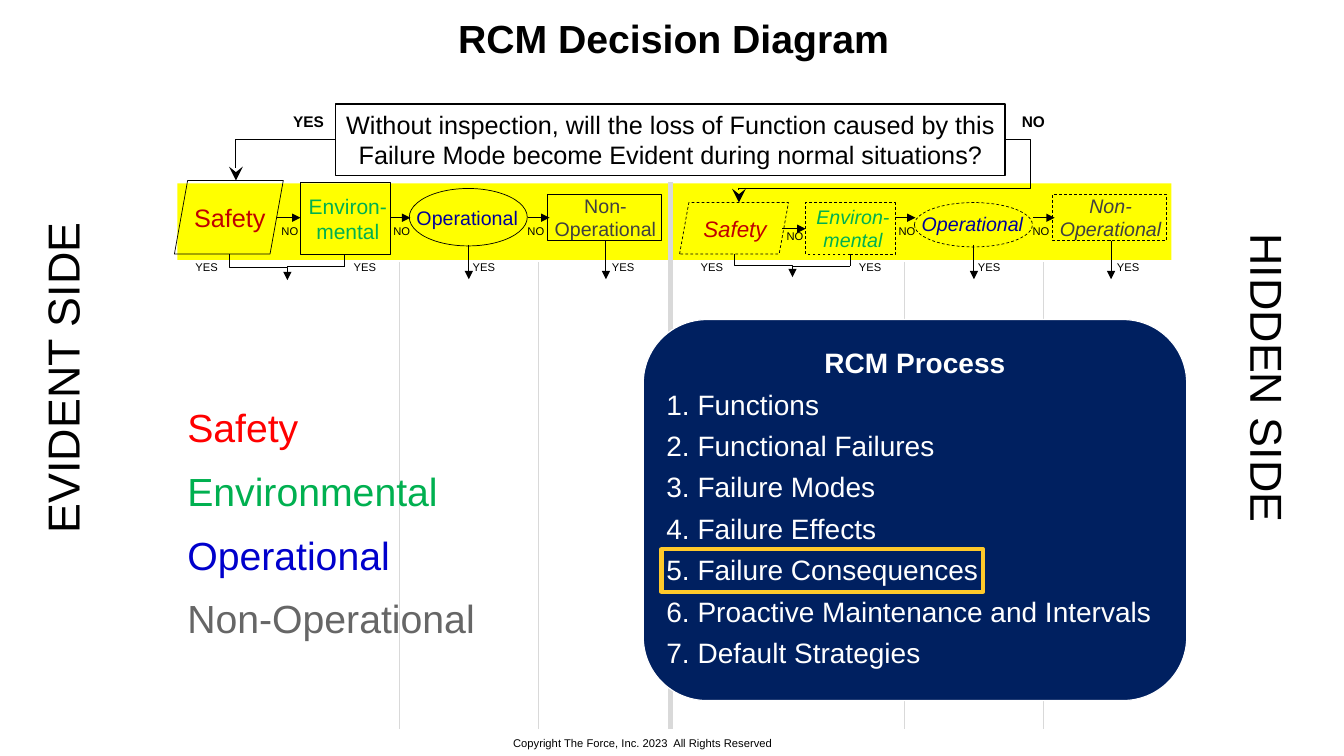
from pptx import Presentation
from pptx.dml.color import RGBColor
from pptx.enum.dml import MSO_LINE
from pptx.enum.shapes import MSO_CONNECTOR as CONNECTOR, MSO_SHAPE as SHAPE
from pptx.enum.text import MSO_ANCHOR as ANCHOR, MSO_AUTO_SIZE as AUTO_SIZE, PP_ALIGN as ALIGN
from pptx.oxml.ns import qn
from pptx.oxml.xmlchemy import OxmlElement
from pptx.util import Inches, Pt

COLORS = {
    "black": "000000", "white": "FFFFFF", "band": "FFFF00", "divider": "D9D9D9",
    "safety": "C00000", "environment": "00B050", "operation": "000099",
    "other": "404040", "panel": "002060", "highlight": "FFC92A",
    "red": "FF0000", "blue": "0000CC", "gray": "666666",
}
HIDDEN_DX = 5.01  # distance from the evident side to the hidden side

# Outline of each step: shape, left, top, width, height
EVIDENT_SHAPES = [
    (SHAPE.PARALLELOGRAM, 1.73, 1.79, 1.08, 0.73),
    (SHAPE.RECTANGLE, 2.98, 1.81, 0.89, 0.71),
    (SHAPE.OVAL, 4.06, 1.87, 1.17, 0.57),
    (SHAPE.RECTANGLE, 5.43, 1.93, 1.13, 0.46),
]
HIDDEN_SHAPES = [
    (SHAPE.PARALLELOGRAM, 1.73, 2.01, 1.08, 0.51),
    (SHAPE.RECTANGLE, 2.98, 2.01, 0.89, 0.51),
    (SHAPE.OVAL, 4.06, 2.01, 1.17, 0.44),
    (SHAPE.RECTANGLE, 5.43, 1.93, 1.13, 0.46),
]
# Label of each step: text, colour, left, width
STEP_LABELS = [
    ("Safety", "safety", 1.8, 0.96),
    ("Environ-\nmental", "environment", 2.91, 1.08),
    ("Operational", "operation", 3.96, 1.35),
    ("Non-\nOperational", "other", 5.33, 1.35),
]
# Top, height and text size of each label
EVIDENT_LABELS = [(1.96, 0.4, 18), (1.87, 0.61, 15), (1.99, 0.34, 14), (1.87, 0.57, 14)]
HIDDEN_LABELS = [(2.09, 0.37, 16), (1.98, 0.57, 14), (2.05, 0.34, 14), (1.87, 0.57, 14)]

PROCESS_STEPS = [
    "Functions", "Functional Failures", "Failure Modes", "Failure Effects",
    "Failure Consequences", "Proactive Maintenance and Intervals", "Default Strategies",
]
LEGEND = [("Safety", "red"), ("Environmental", "environment"),
          ("Operational", "blue"), ("Non-Operational", "gray")]


def rgb(name):
    return RGBColor.from_string(COLORS[name])


def add_box(s, kind, left, top, width, height, fill=None, line=None, weight=0.5, dashed=False):
    sp = s.shapes.add_shape(kind, Inches(left), Inches(top), Inches(width), Inches(height))
    sp.shadow.inherit = False
    if fill:
        sp.fill.solid()
        sp.fill.fore_color.rgb = rgb(fill)
    else:
        sp.fill.background()
    if line:
        sp.line.color.rgb = rgb(line)
        sp.line.width = Pt(weight)
        if dashed:
            sp.line.dash_style = MSO_LINE.DASH
    else:
        sp.line.fill.background()
    return sp


def write(p, text, size, color="black", bold=False, italic=False, align=ALIGN.LEFT):
    """Fill a paragraph, with a line break at each newline."""
    p.alignment = align
    for i, part in enumerate(text.split("\n")):
        if i:
            p.add_line_break()
        r = p.add_run()
        r.text = part
        r.font.name = "Arial"
        r.font.size = Pt(size)
        r.font.bold = bold
        r.font.italic = italic
        r.font.color.rgb = rgb(color)


def add_frame(s, left, top, width, height):
    """Add an empty wrapping text box."""
    sp = s.shapes.add_textbox(Inches(left), Inches(top), Inches(width), Inches(height))
    sp.text_frame.word_wrap = True
    return sp


def add_label(s, text, left, top, width, height, size, align=ALIGN.CENTER, **style):
    sp = add_frame(s, left, top, width, height)
    sp.text_frame.auto_size = AUTO_SIZE.SHAPE_TO_FIT_TEXT
    write(sp.text_frame.paragraphs[0], text, size, align=align, **style)
    return sp


def add_line(s, x1, y1, x2, y2, color="black", weight=0.75, arrow=None, kind=CONNECTOR.STRAIGHT):
    cxn = s.shapes.add_connector(kind, Inches(x1), Inches(y1), Inches(x2), Inches(y2))
    cxn.line.color.rgb = rgb(color)
    cxn.line.width = Pt(weight)
    if arrow:
        end = OxmlElement("a:tailEnd")
        end.set("type", arrow)
        if arrow == "stealth":
            end.set("w", "lg")
            end.set("len", "lg")
        cxn.line._get_or_add_ln().append(end)
    cxn._element.spPr.append(OxmlElement("a:effectLst"))
    return cxn


def add_elbow(s, left, top, width, height, preset, flip, turn=0, adjust=(), **style):
    """Add a bent arrow from its unrotated frame, its flip and its turn in degrees."""
    cxn = add_line(s, left, top, left + width, top + height, kind=CONNECTOR.ELBOW, **style)
    sp_pr = cxn._element.spPr
    xfrm = sp_pr.find(qn("a:xfrm"))
    xfrm.set("rot", str(turn * 60000))
    xfrm.set(flip, "1")
    geom = sp_pr.find(qn("a:prstGeom"))
    geom.set("prst", preset)
    guides = geom.get_or_add_avLst()
    for i, value in enumerate(adjust, 1):
        gd = OxmlElement("a:gd")
        gd.set("name", f"adj{i}")
        gd.set("fmla", f"val {round(value * 100000)}")
        guides.append(gd)


def add_side(s, dx, shapes, labels, hidden):
    """Draw one row of four steps with its arrows and YES / NO labels."""
    for kind, left, top, width, height in shapes:
        sp = add_box(s, kind, left + dx, top, width, height, line="black", dashed=hidden)
        if kind == SHAPE.PARALLELOGRAM:
            sp.adjustments[0] = 0.18
    for (text, color, left, width), (top, height, size) in zip(STEP_LABELS, labels):
        add_label(s, text, left + dx, top, width, height, size, color=color, italic=hidden)

    first_y = 2.27 if hidden else 2.16
    for x1, x2, y in [(2.75, 2.98, first_y), (3.87, 4.07, 2.16), (5.24, 5.45, 2.16)]:
        add_line(s, x1 + dx, y, x2 + dx, y, arrow="triangle")
    for left, top in [(2.68, 2.23 if hidden else 2.18), (3.79, 2.18), (5.12, 2.18)]:
        add_label(s, "NO", left + dx, top, 0.39, 0.24, 8)

    for x, top in [(4.65, 2.43), (6.01, 2.39)]:
        add_line(s, x + dx, top, x + dx, 2.77, arrow="triangle")
    drop = 0.23 if hidden else 0.26
    add_elbow(s, 2.56 - drop / 2 + dx, 2.52 + drop / 2 - 0.29, drop, 0.58,
              "bentConnector3", "flipH", 270, weight=0.5, arrow="triangle")
    add_line(s, 3.42 + dx, 2.53, 3.42 + dx, 2.64, weight=0.5)
    add_line(s, 3.42 + dx, 2.64, 2.85 + dx, 2.64, weight=0.5)
    for left in (1.83, 3.4, 4.58, 5.96):
        add_label(s, "YES", left + dx, 2.53, 0.44, 0.24, 8)

    for x in (3.96, 5.34):
        add_line(s, x + dx, 2.6, x + dx, 7.23, "divider", 1)


def add_question(s):
    sp = add_box(s, SHAPE.RECTANGLE, 3.33, 1.03, 6.64, 0.71, line="black", weight=1)
    tf = sp.text_frame
    tf.word_wrap = True
    tf.vertical_anchor = ANCHOR.MIDDLE
    tf.margin_left = tf.margin_right = Inches(0.08)
    write(tf.paragraphs[0], "Without inspection, will the loss of Function caused by this "
          "Failure Mode become Evident during normal situations?", 18, align=ALIGN.CENTER)
    add_elbow(s, 2.34, 1.38, 0.99, 0.41, "bentConnector2", "flipV", 180, arrow="stealth")
    add_elbow(s, 7.33, 1.38, 2.64, 0.63, "bentConnector4", "flipH",
              adjust=(-0.095, 0.78), arrow="stealth")
    for text, left in (("YES", 2.71), ("NO", 9.9)):
        add_label(s, text, left, 1.06, 0.7, 0.29, 11, bold=True)


def add_process_panel(s):
    add_box(s, SHAPE.ROUNDED_RECTANGLE, 6.38, 3.17, 5.39, 3.78, "panel", "white", 0.85)
    tf = add_frame(s, 6.56, 3.35, 5.03, 3.41).text_frame
    tf.vertical_anchor = ANCHOR.MIDDLE
    tf.margin_left = tf.margin_right = tf.margin_top = tf.margin_bottom = Inches(0.05)
    write(tf.paragraphs[0], "RCM Process", 20, "white", bold=True, align=ALIGN.CENTER)
    for number, step in enumerate(PROCESS_STEPS, 1):
        write(tf.add_paragraph(), f"{number}. {step}", 20, "white")
    for p in tf.paragraphs:
        p.line_spacing = 0.9
        p.space_after = Pt(8)
    add_box(s, SHAPE.RECTANGLE, 6.56, 5.45, 3.19, 0.42, line="highlight", weight=3)


def add_legend(s):
    tf = add_frame(s, 1.76, 3.95, 3.66, 2.49).text_frame
    for i, (text, color) in enumerate(LEGEND):
        p = tf.add_paragraph() if i else tf.paragraphs[0]
        p.space_after = Pt(12)
        write(p, text, 28, color)


def main():
    prs = Presentation()
    prs.slide_width, prs.slide_height = Inches(13.33), Inches(7.5)
    s = prs.slides.add_slide(prs.slide_layouts[6])
    add_label(s, "Copyright The Force, Inc. 2023  All Rights Reserved",
              4.99, 7.26, 2.82, 0.24, 8, align=ALIGN.LEFT)
    add_box(s, SHAPE.RECTANGLE, 1.76, 1.82, 9.86, 0.76, "band")
    title = add_frame(s, 3.38, 0.15, 6.6, 0.46).text_frame
    title.vertical_anchor = ANCHOR.MIDDLE
    write(title.paragraphs[0], "RCM Decision Diagram", 28, bold=True, align=ALIGN.CENTER)
    for text, left, turn in (("EVIDENT SIDE", -1.26, 270), ("HIDDEN SIDE", 10.7, 90)):
        add_label(s, text, left, 3.43, 3.75, 0.64, 32).rotation = turn
    add_line(s, 6.65, 1.81, 6.65, 7.23, "divider", 3)
    add_side(s, 0, EVIDENT_SHAPES, EVIDENT_LABELS, hidden=False)
    add_side(s, HIDDEN_DX, HIDDEN_SHAPES, HIDDEN_LABELS, hidden=True)
    add_question(s)
    add_process_panel(s)
    add_legend(s)
    prs.save("out.pptx")


if __name__ == "__main__":
    main()
